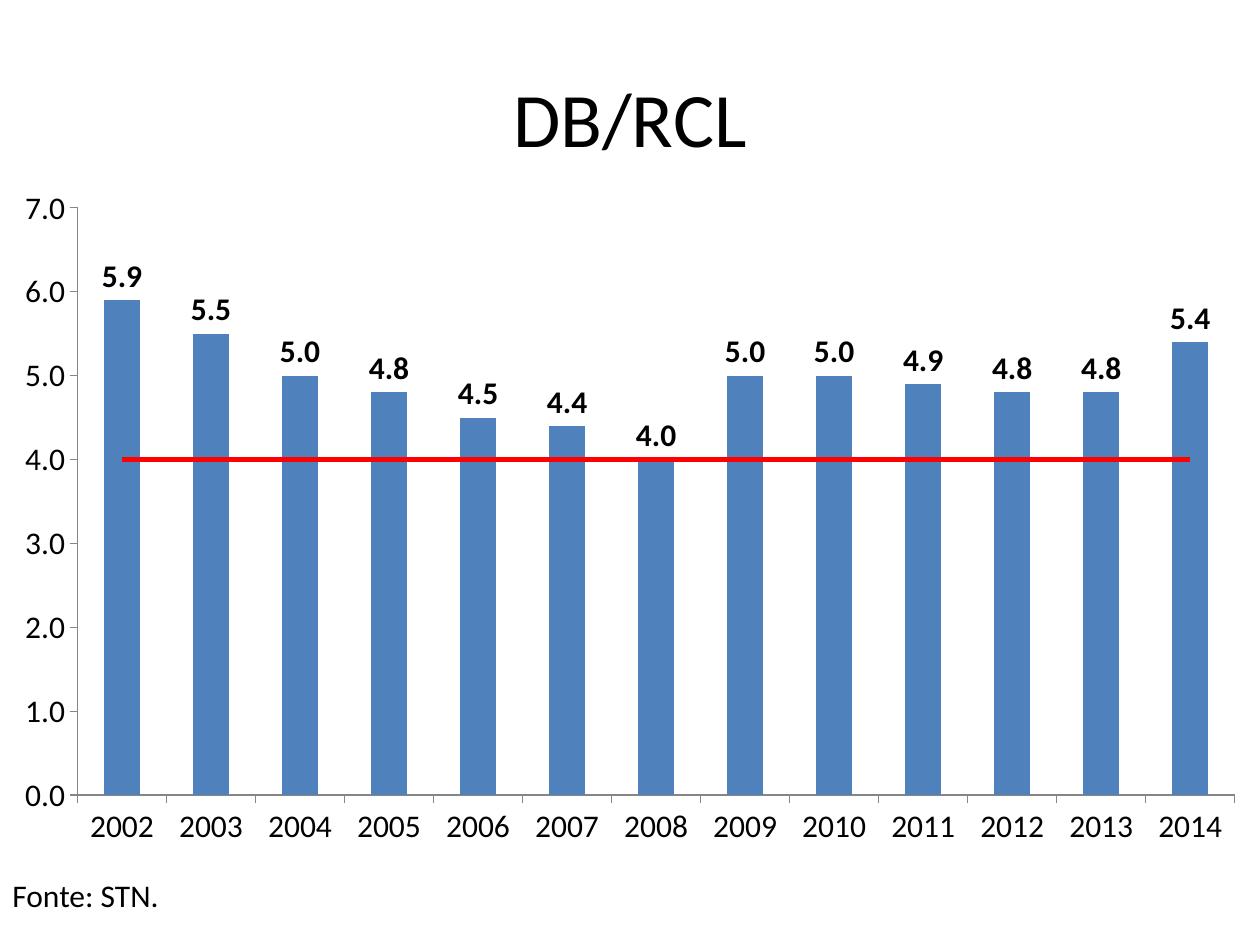
from lxml import etree
from pptx import Presentation
from pptx.chart.data import CategoryChartData
from pptx.dml.color import RGBColor
from pptx.enum.chart import XL_CHART_TYPE as ChartType
from pptx.enum.chart import XL_LABEL_POSITION as LabelPos
from pptx.enum.chart import XL_MARKER_STYLE as Marker
from pptx.enum.chart import XL_TICK_MARK as Tick
from pptx.enum.text import MSO_ANCHOR as Anchor
from pptx.enum.text import PP_ALIGN as Align
from pptx.oxml.ns import qn
from pptx.util import Inches, Pt

FONT = "Calibri"
BLACK = RGBColor(0x00, 0x00, 0x00)
BLUE = RGBColor(0x4F, 0x81, 0xBD)
RED = RGBColor(0xFF, 0x00, 0x00)
GRAY = RGBColor(0x86, 0x86, 0x86)

YEARS = [str(year) for year in range(2002, 2015)]
RATIOS = [5.9, 5.5, 5.0, 4.8, 4.5, 4.4, 4.0, 5.0, 5.0, 4.9, 4.8, 4.8, 5.4]
LIMIT = 4


def style_font(font, size, bold=False):
    font.name = FONT
    font.size = Pt(size)
    font.bold = bold
    font.color.rgb = BLACK


def add_text(slide, text, box, size, align=Align.LEFT, anchor=Anchor.TOP):
    tf = slide.shapes.add_textbox(*map(Inches, box)).text_frame
    tf.word_wrap = True
    tf.vertical_anchor = anchor
    p = tf.paragraphs[0]
    p.text = text
    p.alignment = align
    style_font(p.runs[0].font, size)


def style_axis(axis):
    axis.has_major_gridlines = False
    axis.major_tick_mark = Tick.OUTSIDE
    axis.minor_tick_mark = Tick.NONE
    axis.format.line.color.rgb = GRAY
    axis.format.line.width = Pt(0.75)
    style_font(axis.tick_labels.font, 18)


def move_last_series_to_line(chart):
    bars = chart.plots[0]
    bar_chart = bars.series[0]._element.getparent()
    ser = bars.series[1]._element
    for bar_only in ser.findall(qn("c:invertIfNegative")):
        ser.remove(bar_only)
    line_chart = bar_chart.makeelement(qn("c:lineChart"))
    bar_chart.addnext(line_chart)
    etree.SubElement(line_chart, qn("c:grouping")).set("val", "standard")
    etree.SubElement(line_chart, qn("c:varyColors")).set("val", "0")
    line_chart.append(ser)
    etree.SubElement(line_chart, qn("c:marker")).set("val", "1")
    for axis_id in bar_chart.findall(qn("c:axId")):
        etree.SubElement(line_chart, qn("c:axId")).set("val", axis_id.get("val"))
    return chart.plots[1].series[0]


def style_bars(plot):
    plot.gap_width = 150
    plot.vary_by_categories = False
    series = plot.series[0]
    series.format.fill.solid()
    series.format.fill.fore_color.rgb = BLUE
    labels = series.data_labels
    labels.show_value = True
    labels.number_format = "#,##0.0"
    labels.number_format_is_linked = False
    labels.position = LabelPos.OUTSIDE_END
    style_font(labels.font, 18, bold=True)


def style_limit(series):
    series.smooth = False
    series.marker.style = Marker.NONE
    series.format.line.color.rgb = RED
    series.format.line.width = Pt(3)


def add_ratio_chart(slide, box):
    data = CategoryChartData(number_format="#,##0.0")
    data.categories = YEARS
    data.add_series("Series 1", RATIOS)
    data.add_series("Series 2", [LIMIT] * len(YEARS))
    chart = slide.shapes.add_chart(
        ChartType.COLUMN_CLUSTERED, *map(Inches, box), data
    ).chart
    chart.has_legend = False
    chart.has_title = False
    style_font(chart.font, 10)
    style_axis(chart.category_axis)
    values = chart.value_axis
    style_axis(values)
    values.minimum_scale = 0
    values.maximum_scale = 7
    values.major_unit = 1
    values.tick_labels.number_format = "#,##0.0"
    values.tick_labels.number_format_is_linked = False
    style_bars(chart.plots[0])
    style_limit(move_last_series_to_line(chart))


def main():
    prs = Presentation()
    prs.slide_width = Inches(10)
    prs.slide_height = Inches(7.5)
    s = prs.slides.add_slide(prs.slide_layouts[6])
    add_text(s, "DB/RCL", (0.5, 0.3, 9, 1.25), 44, Align.CENTER, Anchor.MIDDLE)
    add_ratio_chart(s, (0, 1.39, 10, 5.43))
    add_text(s, "Fonte: STN.", (0, 6.9, 10, 0.4), 18)
    prs.save("out.pptx")


if __name__ == "__main__":
    main()
